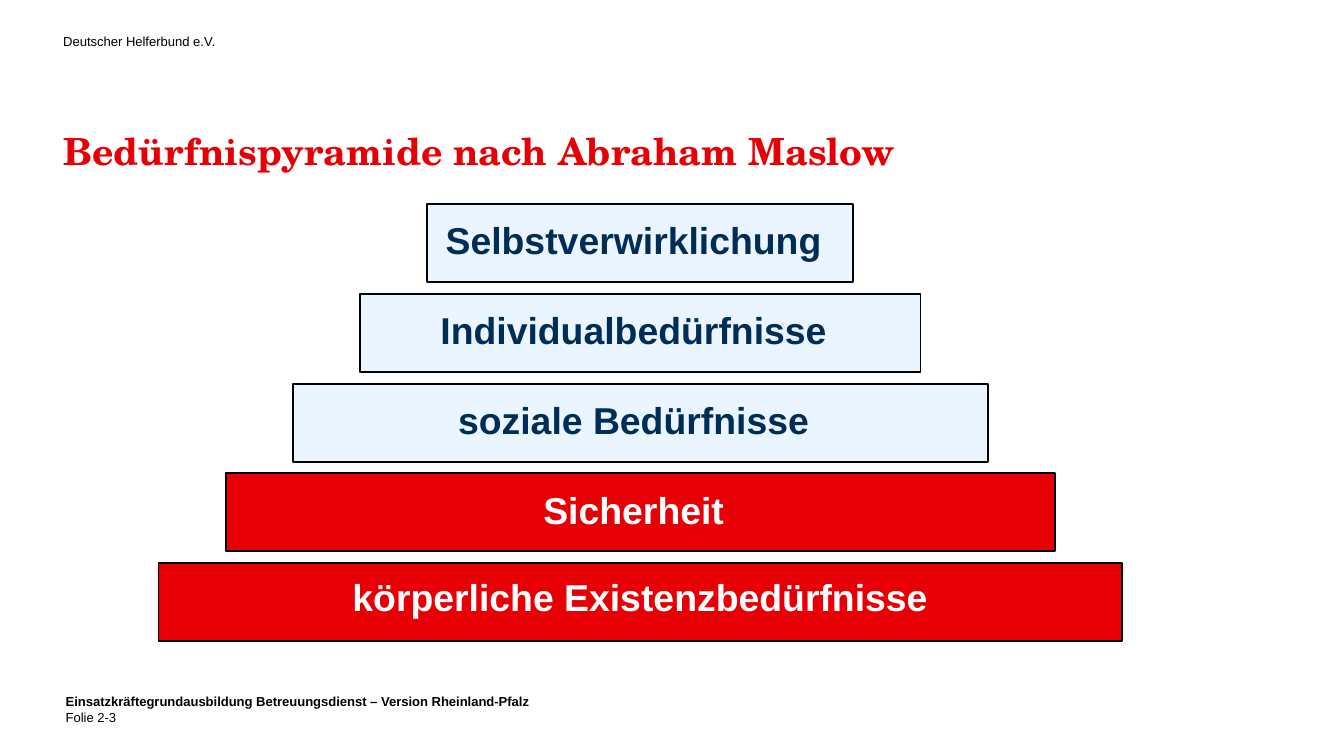
import pptx
import pptx.util
import pptx.dml.color
import pptx.enum.shapes
import pptx.enum.text
from pptx.util import Inches

ANCHOR = pptx.enum.text.MSO_ANCHOR
ALIGN = pptx.enum.text.PP_ALIGN


def rgb(color):
    return pptx.dml.color.RGBColor.from_string(color)


def add_run(p, text, size, color, bold=False, font="Arial"):
    r = p.add_run()
    r.text = text
    r.font.name = font
    r.font.size = pptx.util.Pt(size)
    r.font.bold = bold
    r.font.color.rgb = rgb(color)


# Widescreen 16:9
prs = pptx.Presentation()
prs.slide_width = Inches(10)
prs.slide_height = Inches(10 * 9 / 16)
s = prs.slides.add_slide(prs.slide_layouts[5])

# Title
title = s.shapes.title
title.left, title.top = Inches(0.47), Inches(0.79)
title.width, title.height = Inches(8.06), Inches(0.64)
tf = title.text_frame
tf.auto_size = pptx.enum.text.MSO_AUTO_SIZE.NONE
tf.vertical_anchor = ANCHOR.TOP
tf.margin_left = tf.margin_top = tf.margin_right = tf.margin_bottom = 0
p = tf.paragraphs[0]
p.alignment = ALIGN.LEFT
p.line_spacing = pptx.util.Pt(36)
add_run(p, "Bedürfnispyramide nach Abraham Maslow", 20, "E60005", True, "TeX Gyre Schola")

# Header
header = s.shapes.add_textbox(Inches(0.47), Inches(0.24), Inches(1.79), Inches(0.12))
tf = header.text_frame
tf.word_wrap = True
tf.margin_left = tf.margin_top = tf.margin_right = tf.margin_bottom = 0
p = tf.paragraphs[0]
p.line_spacing = pptx.util.Pt(9)
add_run(p, "Deutscher Helferbund e.V.", 7, "000000")

# Footer
footer = s.shapes.add_textbox(Inches(0.39), Inches(5.11), Inches(9.21), Inches(0.34))
tf = footer.text_frame
tf.word_wrap = True
add_run(tf.paragraphs[0],
        "Einsatzkräftegrundausbildung Betreuungsdienst – Version Rheinland-Pfalz",
        7, "000000", True)
add_run(tf.add_paragraph(), "Folie 2-3", 7, "000000")

# Pyramid: each level is one inch wider than the one above
BLUE = ("EBF5FF", "002D55")
RED = ("E60005", "FFFFFF")
levels = [
    ("Selbstverwirklichung", BLUE),
    ("Individualbedürfnisse", BLUE),
    ("soziale Bedürfnisse", BLUE),
    ("Sicherheit", RED),
    ("körperliche Existenzbedürfnisse", RED),
]
for i, (text, (fill, color)) in enumerate(levels):
    sp = s.shapes.add_shape(
        pptx.enum.shapes.MSO_SHAPE.RECTANGLE,
        Inches(3.18 - 0.5 * i), Inches(1.52 + 2.67 / 4 * i),
        Inches(3.17 + i), Inches(0.58))
    sp.shadow.inherit = False
    sp.fill.solid()
    sp.fill.fore_color.rgb = rgb(fill)
    sp.line.color.rgb = rgb("000000")
    sp.line.width = pptx.util.Pt(1)
    base = i == len(levels) - 1
    tf = sp.text_frame
    tf.word_wrap = True
    tf.vertical_anchor = ANCHOR.MIDDLE
    tf.margin_left = tf.margin_top = 0
    tf.margin_right = Inches(0 if base else 0.1)
    tf.margin_bottom = Inches(0 if base else 0.05)
    p = tf.paragraphs[0]
    p.alignment = ALIGN.CENTER
    if base:
        p.line_spacing = pptx.util.Pt(18)
    add_run(p, text, 20, color, True)

prs.save("out.pptx")
